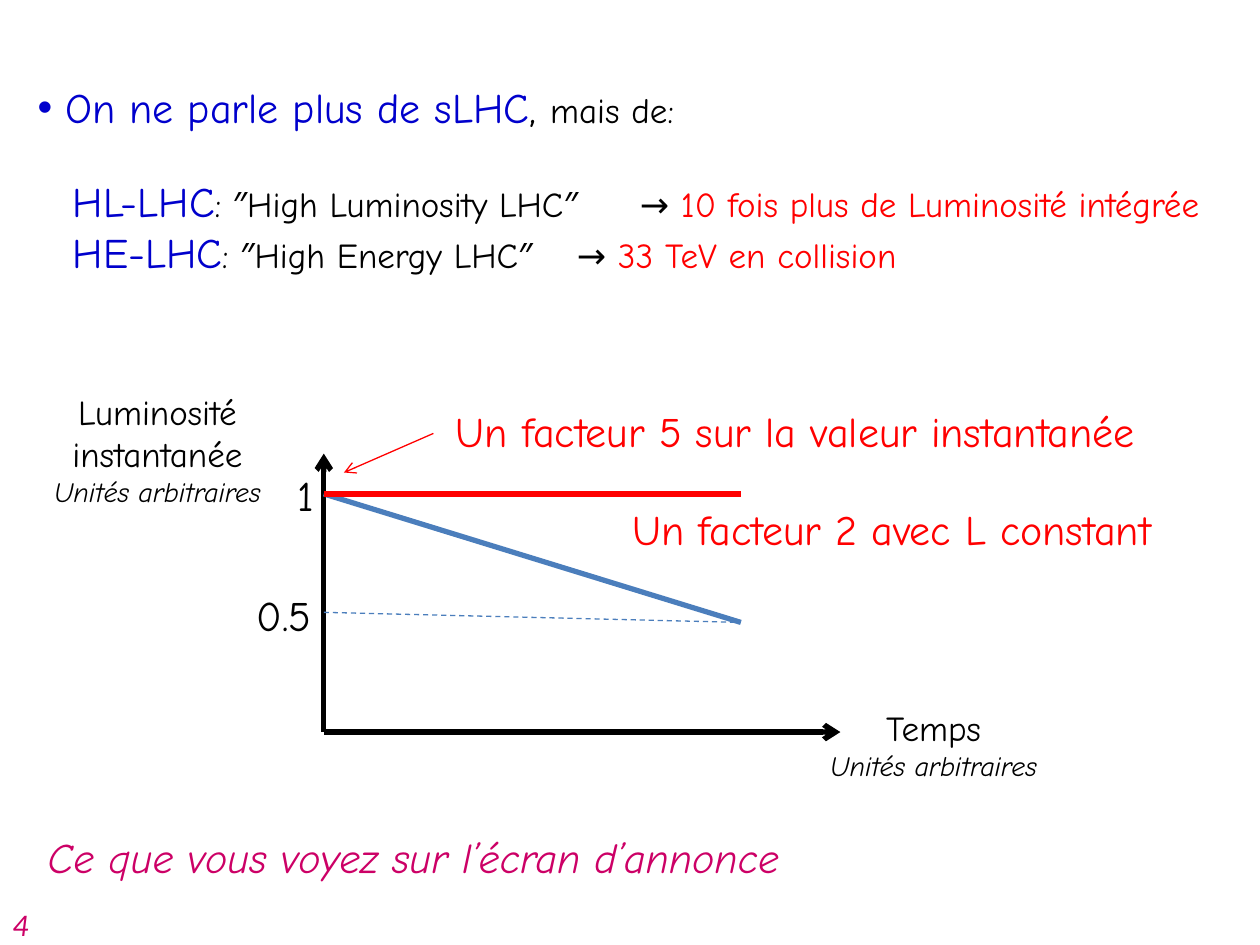
from lxml import etree
from pptx import Presentation
from pptx.dml.color import RGBColor
from pptx.enum import dml, shapes, text
from pptx.oxml import ns
from pptx.util import Inches, Pt

FONT = "Comic Neue"
BLACK, NAVY, RED = "000000", "0000CC", "FF0000"
STEEL, PINK = "4B7EBC", "CC0066"


def color(code):
    return RGBColor.from_string(code)


def style(font, size, code, slant=False, face=FONT):
    font.name, font.size, font.italic = face, Pt(size), slant
    font.color.rgb = color(code)


def add(parent, tag, **attrs):
    return etree.SubElement(parent, ns.qn(tag), {k: str(v) for k, v in attrs.items()})


def frame(slide, box):
    area = slide.shapes.add_textbox(*map(Inches, box)).text_frame
    area.word_wrap = False
    return area


def label(slide, box, rows, align=text.PP_ALIGN.LEFT):
    area = frame(slide, box)
    for i, (words, *look) in enumerate(rows):
        para = area.paragraphs[0] if i == 0 else area.add_paragraph()
        para.text, para.alignment = words, align
        style(para.font, *look)


def line(slide, start, end, code, width, arrow=False, dash=False):
    link = slide.shapes.add_connector(
        shapes.MSO_CONNECTOR.STRAIGHT, *map(Inches, (*start, *end)))
    link.line.color.rgb = color(code)
    link.line.width = Pt(width)
    if dash:
        link.line.dash_style = dml.MSO_LINE.DASH
    if arrow:
        add(link.line._get_or_add_ln(), "a:tailEnd", type="arrow")
    add(link._element.spPr, "a:effectLst")


def intro(slide, box):
    area = frame(slide, box)
    rows = [
        (0.22, -0.22, None, [("On ne parle plus de sLHC", 24, NAVY),
                             (", ", 24, BLACK), ("mais de:", 20, BLACK)]),
        (0.28, 0, 4.46, [("HL-LHC", 24, NAVY),
                         (": ″High Luminosity LHC″\t→ ", 20, BLACK),
                         ("10 fois plus de Luminosité intégrée", 20, RED)]),
        (0.28, 0, 4.65, [("HE-LHC", 24, NAVY),
                         (": ″High Energy LHC″\t→ ", 20, BLACK),
                         ("33 TeV en collision", 20, RED)]),
    ]
    for i, (margin, indent, tab, parts) in enumerate(rows):
        para = area.paragraphs[0] if i == 0 else area.add_paragraph()
        props = para._p.get_or_add_pPr()
        props.set("marL", str(Inches(margin)))
        props.set("indent", str(Inches(indent)))
        if i == 1:
            para.space_before = Pt(25)
        if tab:
            stops = add(props, "a:tabLst")
            add(stops, "a:tab", pos=Inches(tab), algn="l")
        else:
            add(props, "a:buFont", typeface="Arial")
            add(props, "a:buChar", char="•")
        for words, size, code in parts:
            run = para.add_run()
            run.text = words
            style(run.font, size, code)


def graph(slide, box):
    left, top, wide, high = box
    base, right = top + high, left + 3.31
    peak, half, last = top + 0.32, top + 1.26, top + 1.34
    line(slide, (left, base), (left, top), BLACK, 3, arrow=True)
    line(slide, (left, base), (left + wide, base), BLACK, 3, arrow=True)
    line(slide, (left, peak), (right, last), STEEL, 3)
    line(slide, (left, half), (right, last), STEEL, 0.75, dash=True)
    line(slide, (left, peak), (right, peak), RED, 3)
    line(slide, (left + 0.87, top - 0.16), (left + 0.16, top + 0.15), RED, 0.75, arrow=True)

    unit = ("Unités arbitraires", 16, BLACK, True)
    mid = text.PP_ALIGN.CENTER
    label(slide, (left - 2.37, top - 0.55, 2.1, 1.04),
          [("Luminosité", 20, BLACK), ("instantanée", 20, BLACK), unit], mid)
    label(slide, (left + 3.79, base - 0.25, 2.1, 0.71), [("Temps", 20, BLACK), unit], mid)
    for words, x, y, w, code in [
        ("1", -0.31, 0.08, 0.35, BLACK),
        ("0.5", -0.63, 1.03, 0.7, BLACK),
        ("Un facteur 5 sur la valeur instantanée", 0.95, -0.43, 6.16, RED),
        ("Un facteur 2 avec L constant", 2.35, 0.35, 4.86, RED),
    ]:
        label(slide, (left + x, top + y, w, 0.5), [(words, 24, code)])


def main():
    deck = Presentation()
    deck.slide_width, deck.slide_height = Inches(10), Inches(7.5)
    slide = deck.slides.add_slide(deck.slide_layouts[6])
    intro(slide, (0.2, 0.6, 9.81, 1.65))
    graph(slide, (2.57, 3.6, 4.1, 2.21))
    label(slide, (0.28, 6.55, 6.3, 0.5),
          [("Ce que vous voyez sur l’écran d’annonce", 24, PINK, True)])
    label(slide, (0, 7.13, 0.33, 0.4), [("4", 18, PINK, True, "Calibri")])
    deck.save("out.pptx")


if __name__ == "__main__":
    main()
